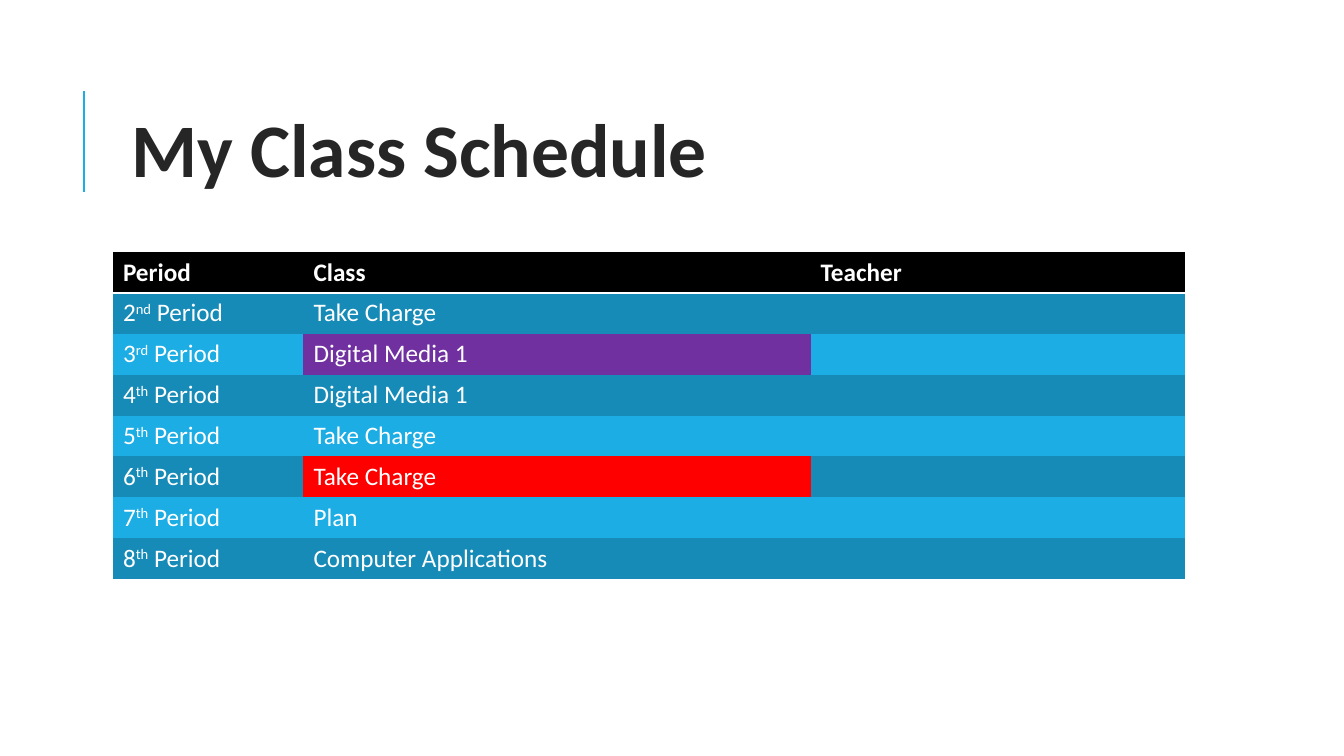
from dataclasses import dataclass

from lxml.etree import SubElement
from pptx import Presentation
from pptx.dml.color import RGBColor
from pptx.enum.shapes import MSO_CONNECTOR
from pptx.enum.text import MSO_ANCHOR, MSO_AUTO_SIZE, PP_ALIGN
from pptx.oxml.ns import qn
from pptx.util import Inches, Pt


@dataclass(frozen=True)
class Theme:
    font: str = "Calibri"
    title_size: int = 54
    table_size: int = 18
    title: str = "262626"
    light: str = "FFFFFF"
    header: str = "000000"
    accent: str = "1CADE4"
    band: str = "168BB7"
    purple: str = "7030A0"
    red: str = "FF0000"


THEME = Theme()
PLAIN_TABLE_STYLE = "{2D5ABB26-0587-4C30-8999-92F81FD0307C}"
HEADINGS = ["Period", "Class", "Teacher"]
COLUMN_WIDTHS = [1.89, 5.03, 3.71]
ROW_HEIGHT = 0.405
SCHEDULE = [
    ("2", "nd", "Take Charge", None),
    ("3", "rd", "Digital Media 1", THEME.purple),
    ("4", "th", "Digital Media 1", None),
    ("5", "th", "Take Charge", None),
    ("6", "th", "Take Charge", THEME.red),
    ("7", "th", "Plan", None),
    ("8", "th", "Computer Applications", None),
]


def write(paragraph, text, size=THEME.table_size, color=THEME.light, bold=False, raised=False):
    run = paragraph.add_run()
    run.text = text
    run.font.name = THEME.font
    run.font.size = Pt(size)
    run.font.bold = bold
    run.font.color.rgb = RGBColor.from_string(color)
    if raised:
        run.font._element.set("baseline", "30000")


def fill_cell(cell, color):
    cell.fill.solid()
    cell.fill.fore_color.rgb = RGBColor.from_string(color)


def underline_cell(cell, color, width):
    border = SubElement(cell._tc.get_or_add_tcPr(), qn("a:lnB"), w=str(Pt(width)))
    solid = SubElement(border, qn("a:solidFill"))
    SubElement(solid, qn("a:srgbClr"), val=color)


def add_accent_line(slide):
    accent = slide.shapes.add_connector(
        MSO_CONNECTOR.STRAIGHT, Inches(0.83), Inches(1.9), Inches(0.83), Inches(0.9)
    )
    accent.line.color.rgb = RGBColor.from_string(THEME.accent)
    accent.line.width = Pt(1.5)
    SubElement(accent._element.spPr, qn("a:effectLst"))


def add_schedule(slide):
    frame = slide.shapes.add_table(
        len(SCHEDULE) + 1, len(HEADINGS), Inches(1.12), Inches(2.5),
        Inches(sum(COLUMN_WIDTHS)), Inches(ROW_HEIGHT * (len(SCHEDULE) + 1)),
    )
    schedule = frame.table
    schedule._tbl.tblPr.find(qn("a:tableStyleId")).text = PLAIN_TABLE_STYLE
    for column, width in zip(schedule.columns, COLUMN_WIDTHS):
        column.width = Inches(width)
    for row in schedule.rows:
        row.height = Inches(ROW_HEIGHT)

    for column, heading in enumerate(HEADINGS):
        cell = schedule.cell(0, column)
        write(cell.text_frame.paragraphs[0], heading, bold=True)
        underline_cell(cell, THEME.light, 2)
        fill_cell(cell, THEME.header)

    for row, (number, suffix, subject, highlight) in enumerate(SCHEDULE, start=1):
        band = THEME.band if row % 2 else THEME.accent
        period_cell, class_cell, teacher_cell = (schedule.cell(row, c) for c in range(3))
        period = period_cell.text_frame.paragraphs[0]
        write(period, number)
        write(period, suffix, raised=True)
        write(period, " Period")
        write(class_cell.text_frame.paragraphs[0], subject)
        fill_cell(period_cell, band)
        fill_cell(class_cell, highlight or band)
        fill_cell(teacher_cell, band)


def add_title(slide, text):
    title = slide.shapes.add_textbox(Inches(1.12), Inches(0.96), Inches(6.08), Inches(1.01))
    frame = title.text_frame
    frame.word_wrap = False
    frame.auto_size = MSO_AUTO_SIZE.SHAPE_TO_FIT_TEXT
    frame.vertical_anchor = MSO_ANCHOR.TOP
    heading = frame.paragraphs[0]
    heading.alignment = PP_ALIGN.CENTER
    write(heading, text, size=THEME.title_size, color=THEME.title, bold=True)


def main():
    presentation = Presentation()
    presentation.slide_width = Inches(13.33)
    presentation.slide_height = Inches(7.5)
    slide = presentation.slides.add_slide(presentation.slide_layouts[6])
    add_accent_line(slide)
    add_schedule(slide)
    add_title(slide, "My Class Schedule")
    presentation.save("out.pptx")


if __name__ == "__main__":
    main()
